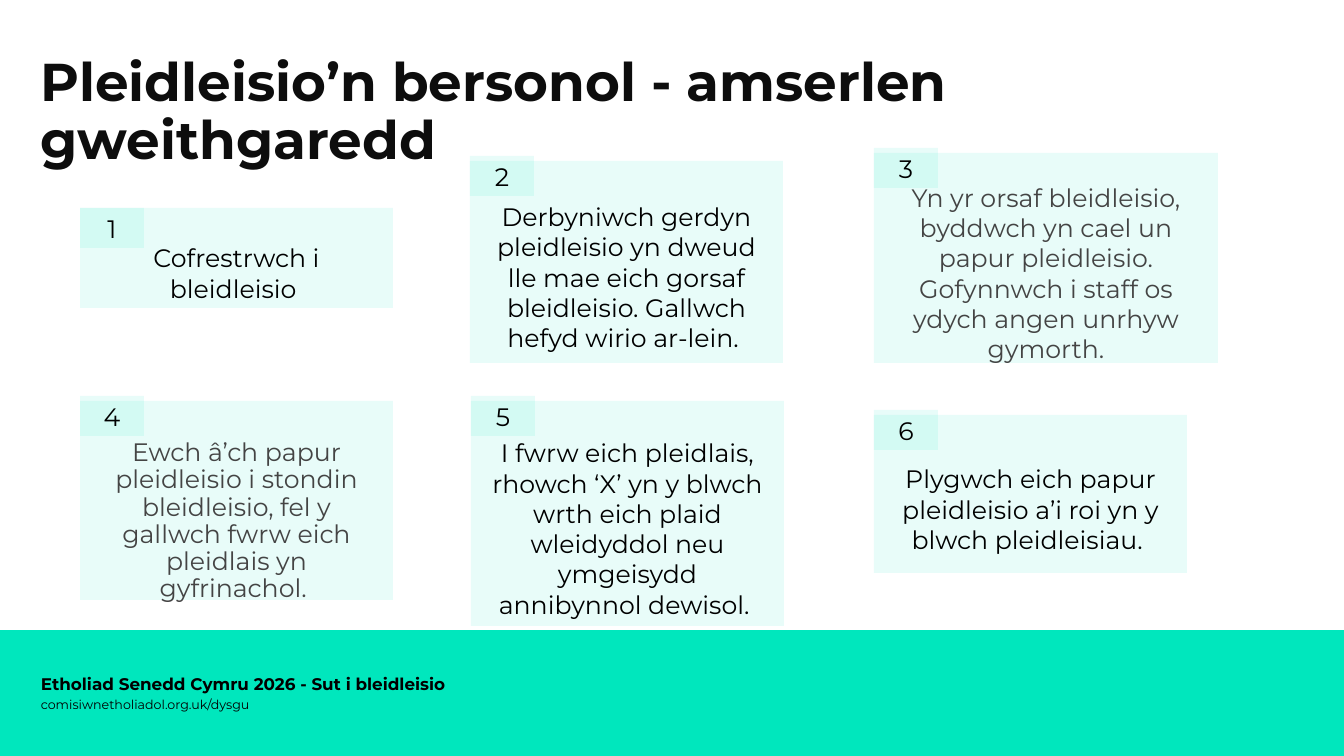
from pptx import Presentation
from pptx.dml.color import RGBColor
from pptx.enum.shapes import MSO_SHAPE
from pptx.enum.text import MSO_ANCHOR, MSO_AUTO_SIZE, PP_ALIGN
from pptx.oxml.ns import qn
from pptx.util import Emu, Pt
from lxml.etree import SubElement

EMU_PER_PX = 914400 / 100.8
FONT = "Montserrat"
COLOURS = {"mint": "00E7BD", "title": "0D0D0D", "black": "000000", "grey": "444444"}
TINT_PERCENT = 9

TITLE = "Pleidleisio’n bersonol - amserlen gweithgaredd"
FOOTER_BAND = (0, 630, 1344, 126)
FOOTER_LINES = [
    # text, top, size, bold
    ("Etholiad Senedd Cymru 2026 - Sut i bleidleisio", 664, 12, True),
    ("comisiwnetholiadol.org.uk/dysgu", 684, 9, False),
]

PAD = 20
TAB_WIDTH, TAB_HEIGHT = 64, 40
NORMAL = {"colour": "black", "head_room": 30, "spacing": 1.0}
GREY = {**NORMAL, "colour": "grey"}
GREY_TIGHT = {"colour": "grey", "head_room": 42, "spacing": 0.9}
STEPS = [
    # text, (left, top, width, height), rise of the number tab, style
    ("Cofrestrwch i bleidleisio ", (80, 208, 313, 100), 0, NORMAL),
    ("Derbyniwch gerdyn pleidleisio yn dweud lle mae eich gorsaf bleidleisio. "
     "Gallwch hefyd wirio ar-lein. ", (470, 161, 313, 202), 5, NORMAL),
    ("Yn yr orsaf bleidleisio, byddwch yn cael un papur pleidleisio. "
     "Gofynnwch i staff os ydych angen unrhyw gymorth.",
     (874, 153, 344, 210), 5, GREY),
    ("Ewch â’ch papur pleidleisio i stondin bleidleisio, fel y gallwch fwrw "
     "eich pleidlais yn gyfrinachol. ", (80, 401, 313, 199), 5, GREY_TIGHT),
    ("I fwrw eich pleidlais, rhowch ‘X’ yn y blwch wrth eich plaid wleidyddol "
     "neu ymgeisydd annibynnol dewisol. ", (471, 401, 313, 225), 5, NORMAL),
    ("Plygwch eich papur pleidleisio a’i roi yn y blwch pleidleisiau. ",
     (874, 415, 313, 158), 5, NORMAL),
]


def px(length):
    return Emu(round(length * EMU_PER_PX))


def box(values):
    return [px(value) for value in values]


def rgb(name):
    return RGBColor.from_string(COLOURS[name])


def write(frame, text, size, colour, bold=False, align=PP_ALIGN.LEFT,
          anchor=MSO_ANCHOR.MIDDLE, spacing=1.0):
    frame.word_wrap = True
    frame.auto_size = MSO_AUTO_SIZE.NONE
    frame.vertical_anchor = anchor
    paragraph = frame.paragraphs[0]
    paragraph.alignment = align
    paragraph.line_spacing = spacing
    run = paragraph.add_run()
    run.text = text
    run.font.name = FONT
    run.font.size = Pt(size)
    run.font.bold = bold
    run.font.color.rgb = rgb(colour)


def add_mint_rectangle(slide, bounds, opacity=100):
    shape = slide.shapes.add_shape(MSO_SHAPE.RECTANGLE, *box(bounds))
    shape.shadow.inherit = False
    shape.line.fill.background()
    shape.fill.solid()
    shape.fill.fore_color.rgb = rgb("mint")
    if opacity < 100:
        colour = next(shape.fill._xPr.iter(qn("a:srgbClr")))
        SubElement(colour, qn("a:alpha"), val=str(opacity * 1000))
    return shape


def add_panel(slide, bounds, text, colour="black", head_room=0, spacing=1.0):
    """Add a tinted panel with centred text; head_room is extra space on top."""
    frame = add_mint_rectangle(slide, bounds, TINT_PERCENT).text_frame
    frame.margin_left = frame.margin_right = frame.margin_bottom = px(PAD)
    frame.margin_top = px(PAD + head_room)
    write(frame, text, 18, colour, align=PP_ALIGN.CENTER, spacing=spacing)


def main():
    presentation = Presentation()
    presentation.slide_width, presentation.slide_height = px(1344), px(756)
    slide = presentation.slides.add_slide(presentation.slide_layouts[5])

    add_mint_rectangle(slide, FOOTER_BAND)
    for text, top, size, bold in FOOTER_LINES:
        label = slide.shapes.add_textbox(*box((31, top, 771, 40)))
        write(label.text_frame, text, size, "black", bold)

    title = slide.shapes.title
    title.left, title.top, title.width, title.height = box((30, 51, 1245, 68))
    write(title.text_frame, TITLE, 38, "title", True,
          anchor=MSO_ANCHOR.TOP, spacing=0.9)

    for text, bounds, _, style in STEPS:
        add_panel(slide, bounds, text, **style)
    for number, (_, (left, top, _, _), rise, _) in enumerate(STEPS, 1):
        add_panel(slide, (left, top - rise, TAB_WIDTH, TAB_HEIGHT), str(number))

    presentation.save("out.pptx")


if __name__ == "__main__":
    main()
